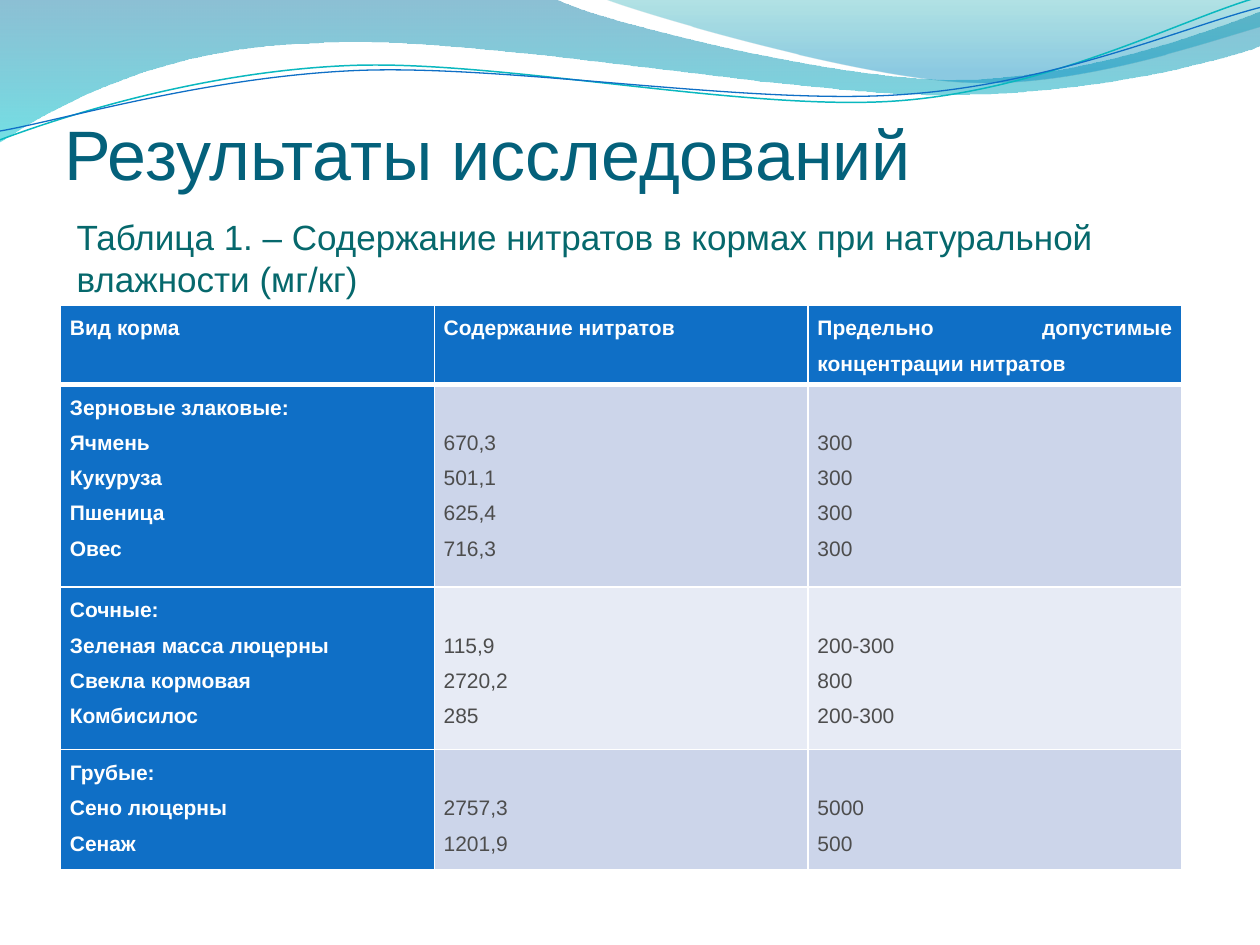
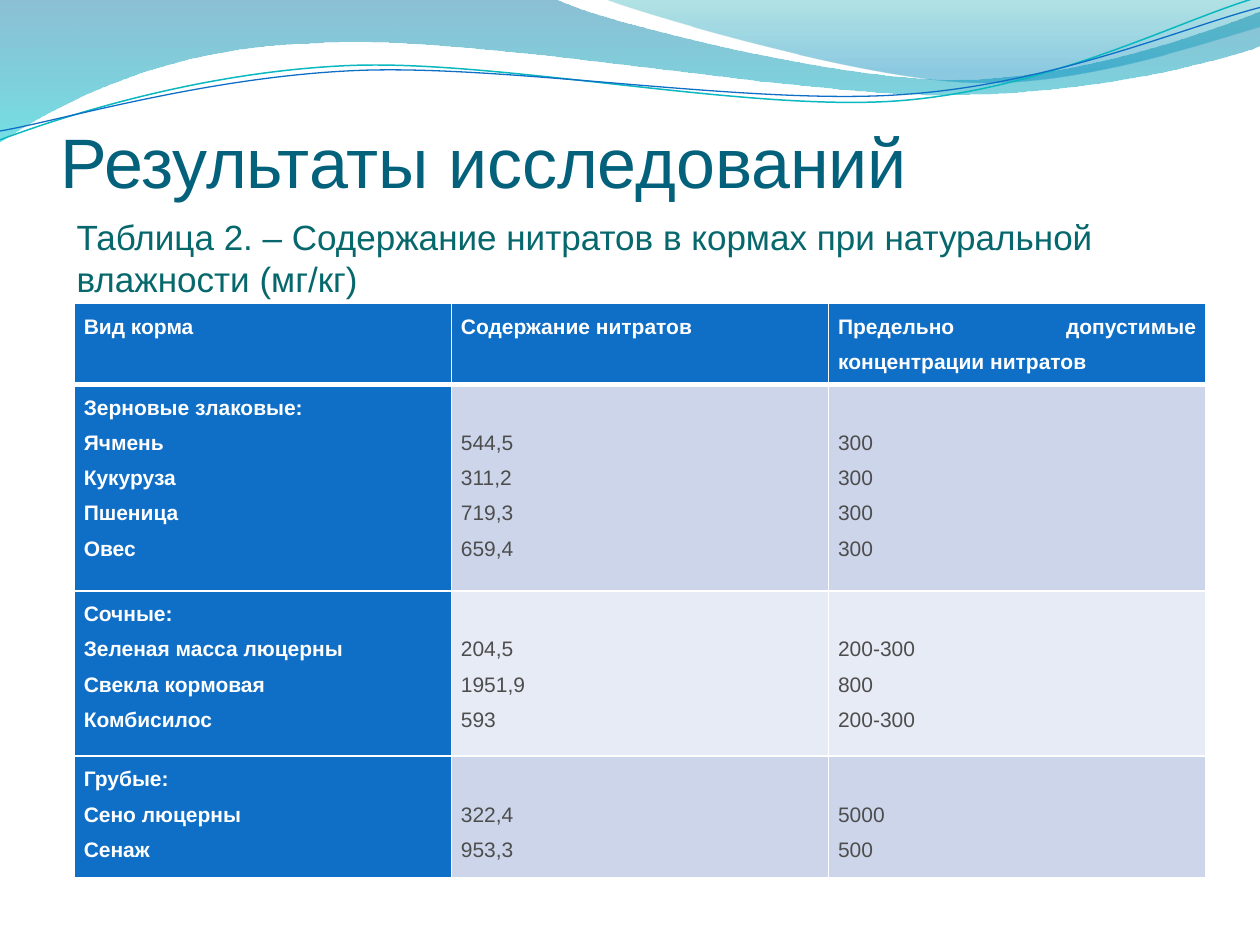
from math import cos, radians, sin
from lxml.etree import SubElement
from pptx import Presentation
from pptx.dml.color import RGBColor
from pptx.enum.text import MSO_ANCHOR as Anchor, MSO_AUTO_SIZE as Fit, PP_ALIGN as Align
from pptx.oxml.ns import qn
from pptx.util import Emu, Pt

WHITE = RGBColor(0xFF, 0xFF, 0xFF)
BLUE = RGBColor(0x0F, 0x6F, 0xC6)
TEAL = RGBColor(0x0A, 0xB8, 0xBF)
NAVY = RGBColor(0x04, 0x61, 0x7B)
GREEN = RGBColor(0x06, 0x68, 0x6C)
GREY = RGBColor(0x4D, 0x4D, 0x4D)
BANDS = (RGBColor(0xCC, 0xD5, 0xEA), RGBColor(0xE7, 0xEB, 0xF5))

FONT = "Arial"
UNIT = 914400  # the slide is a grid of 10 columns and 7.5 rows
COLS, ROWS = 10, 7.5
LINE = 0.28  # height of one text line in the table, in grid rows
PAD = Pt(5.4)  # side margin of a table cell
TILT = -2.7  # turn of the thin lines, in degrees

# Each wave is a start point, then steps: one point is a line, three a curve.
BIG = [[(0, 0)], [(4.4, -0.01)],
       [(4.76, 0.17), (6.64, 0.63), (7.58, 0.63)],
       [(8.53, 0.63), (9.58, 0.26), (10, 0.09)], [(10.01, 0.36)],
       [(9.83, 0.44), (8.7, 0.76), (7.46, 0.75)],
       [(6.22, 0.75), (3.82, 0.28), (2.57, 0.34)],
       [(1.29, 0.36), (0.46, 0.83), (-0.01, 1.13)], [(0, 0)]]
SMALL = [[(4.79, -0.01)], [(5.09, 0.11), (6.82, 0.62), (7.69, 0.65)],
         [(8.56, 0.69), (9.61, 0.32), (10, 0.21)], [(10, 0)], [(4.79, -0.01)]]
UPPER = [[(0, 1.11)], [(0.48, 0.93), (1.58, 0.57), (2.77, 0.52)],
         [(3.95, 0.47), (5.93, 0.89), (7.13, 0.8)],
         [(8.33, 0.71), (9.38, 0.15), (9.98, -0.02)]]
LOWER = [[(0, 1.04)], [(0.47, 0.96), (1.64, 0.61), (2.83, 0.56)],
         [(4.03, 0.51), (5.97, 0.84), (7.17, 0.75)],
         [(8.36, 0.67), (9.41, 0.21), (10, 0.06)]]
FILLS = [(BIG, [(0, RGBColor(0x00, 0x74, 0xA1), 45), (1, RGBColor(0x00, 0xC6, 0xCF), 55)]),
         (SMALL, [(0, RGBColor(0x00, 0xA1, 0xA9), 30), (0.8, RGBColor(0x00, 0x8B, 0xBF), 45)])]
LINES = [(UPPER, (4.99, 0.58), TEAL, 0.85), (LOWER, (5, 0.59), BLUE, 0.75)]

HEADS = ["Вид корма", "Содержание нитратов", "Предельно допустимые концентрации нитратов"]
FEEDS = [["Зерновые злаковые:", "Ячмень", "Кукуруза", "Пшеница", "Овес"],
         ["Сочные:", "Зеленая масса люцерны", "Свекла кормовая", "Комбисилос"],
         ["Грубые:", "Сено люцерны", "Сенаж"]]
LIMITS = [["300"] * 4, ["200-300", "800", "200-300"], ["5000", "500"]]
FIRST = [["670,3", "501,1", "625,4", "716,3"], ["115,9", "2720,2", "285"], ["2757,3", "1201,9"]]
SECOND = [["544,5", "311,2", "719,3", "659,4"], ["204,5", "1951,9", "593"], ["322,4", "953,3"]]


def grid(*cells):
    return [Emu(round(c * UNIT)) for c in cells]


def place(shape, box):
    shape.left, shape.top, shape.width, shape.height = grid(*box)


def style(frame, size, color, bold=False):
    for para in frame.paragraphs:
        for run in para.runs:
            font = run.font
            font.name, font.size, font.bold = FONT, Pt(size), bold
            font.color.rgb = color


def turn(steps, pivot, angle):
    a, (px, py) = radians(angle), pivot
    return [[(px + (x - px) * cos(a) - (y - py) * sin(a),
              py + (x - px) * sin(a) + (y - py) * cos(a)) for x, y in step]
            for step in steps]


def add_wave(slide, steps, closed):
    points = [grid(*p) for step in steps for p in step]
    pen = slide.shapes.build_freeform(*points[0])
    pen.add_line_segments(points[1:], close=closed)
    wave = pen.convert_to_shape()
    wave.shadow.inherit = False
    bend(wave, steps)
    return wave


def bend(wave, steps):
    """Join each three line segments of a curve step into one Bezier segment."""
    route = next(wave.element.iter(qn("a:path")))
    parts = iter(route.findall(qn("a:lnTo")))
    for step in steps[1:]:
        group = [next(parts) for _ in step]
        if len(group) == 3:
            curve = SubElement(route, qn("a:cubicBezTo"))
            group[0].addprevious(curve)
            for part in group:
                curve.append(part[0])
                route.remove(part)


def fade(shape, stops):
    """Fill from top to bottom with half-clear colours."""
    shape.line.fill.background()
    shape.fill.gradient()
    shape.fill.gradient_angle = 270
    for stop, (spot, color, _) in zip(shape.fill.gradient_stops, stops):
        stop.position = spot
        stop.color.rgb = color
    tones = shape.element.spPr.iter(qn("a:srgbClr"))
    for tone, (_, _, alpha) in zip(tones, stops):
        SubElement(tone, qn("a:alpha"), val=str(alpha * 1000))


def add_band(slide):
    """Draw the waves once and keep them on the master of all slides."""
    waves = []
    for steps, stops in FILLS:
        wave = add_wave(slide, steps, True)
        fade(wave, stops)
        waves.append(wave)
    for steps, pivot, color, width in LINES:
        wave = add_wave(slide, turn(steps, pivot, -TILT), False)
        wave.rotation = TILT
        wave.fill.background()
        wave.line.color.rgb = color
        wave.line.width = Pt(width)
        waves.append(wave)
    tree = slide.slide_layout.slide_master.shapes.element
    for i, wave in enumerate(waves):
        tree.insert(2 + i, wave.element)


def add_title(slide, left, top):
    title = slide.shapes.title
    place(title, (left, top, 9, 1.25))
    frame = title.text_frame
    frame.text = "Результаты исследований"
    frame.auto_size = Fit.NONE
    frame.vertical_anchor = Anchor.BOTTOM
    frame.margin_left, frame.margin_top, frame.margin_right, frame.margin_bottom = grid(0, 0.05, 0, 0)
    frame.paragraphs[0].alignment = Align.LEFT
    style(frame, 40, NAVY)


def add_label(slide, number):
    frame = slide.shapes.add_textbox(*grid(0.51, 1.66, 9.29, 0.77)).text_frame
    frame.word_wrap = True
    frame.auto_size = Fit.SHAPE_TO_FIT_TEXT
    frame.text = f"Таблица {number}. – Содержание нитратов в кормах при натуральной влажности (мг/кг)"
    style(frame, 20, GREEN)


def add_edges(cell, **widths):
    props = cell._tc.get_or_add_tcPr()
    for side in "LRTB":
        edge = SubElement(props, qn(f"a:ln{side}"), w=str(Pt(widths.get(side, 1))))
        fill = SubElement(edge, qn("a:solidFill"))
        SubElement(fill, qn("a:srgbClr"), val=str(WHITE))


def fill_cell(cell, text, row, col):
    is_key = row == 0 or col == 0
    add_edges(cell, T=3 if row == 1 else 1, B=3 if row == 0 else 1)
    cell.fill.solid()
    cell.fill.fore_color.rgb = BLUE if is_key else BANDS[(row - 1) % 2]
    # values start level with the second line of the first column
    cell.margin_top, cell.margin_bottom = grid(0 if is_key else LINE, 0)
    cell.margin_left = cell.margin_right = PAD
    frame = cell.text_frame
    frame.text = text
    for para in frame.paragraphs:
        para.alignment = Align.JUSTIFY
        para.line_spacing = 1.5
    style(frame, 12, WHITE if is_key else GREY, is_key)


def add_feeds(slide, values, left, top, width, heights):
    box = grid(left, top, width, sum(heights))
    table = slide.shapes.add_table(len(heights), len(HEADS), *box).table
    for col in table.columns:
        col.width = box[2] // len(HEADS)
    for row, height in zip(table.rows, grid(*heights)):
        row.height = height
    groups = [["\n".join(lines) for lines in group] for group in zip(FEEDS, values, LIMITS)]
    for r, texts in enumerate([HEADS, *groups]):
        for c, text in enumerate(texts):
            fill_cell(table.cell(r, c), text, r, c)


def main():
    deck = Presentation()
    deck.slide_width, deck.slide_height = grid(COLS, ROWS)
    plans = [((0.51, 0.29), FIRST, (0.48, 2.42, 8.9), (0.63, 1.61, 1.29, 0.95)),
             ((0.48, 0.36), SECOND, (0.59, 2.41, 8.98), (0.64, 1.64, 1.31, 0.97))]
    for number, (spot, values, area, heights) in enumerate(plans, 1):
        slide = deck.slides.add_slide(deck.slide_layouts[5])
        if number == 1:
            add_band(slide)
        add_title(slide, *spot)
        add_feeds(slide, values, *area, heights)
        add_label(slide, number)
    deck.save("out.pptx")


if __name__ == "__main__":
    main()
